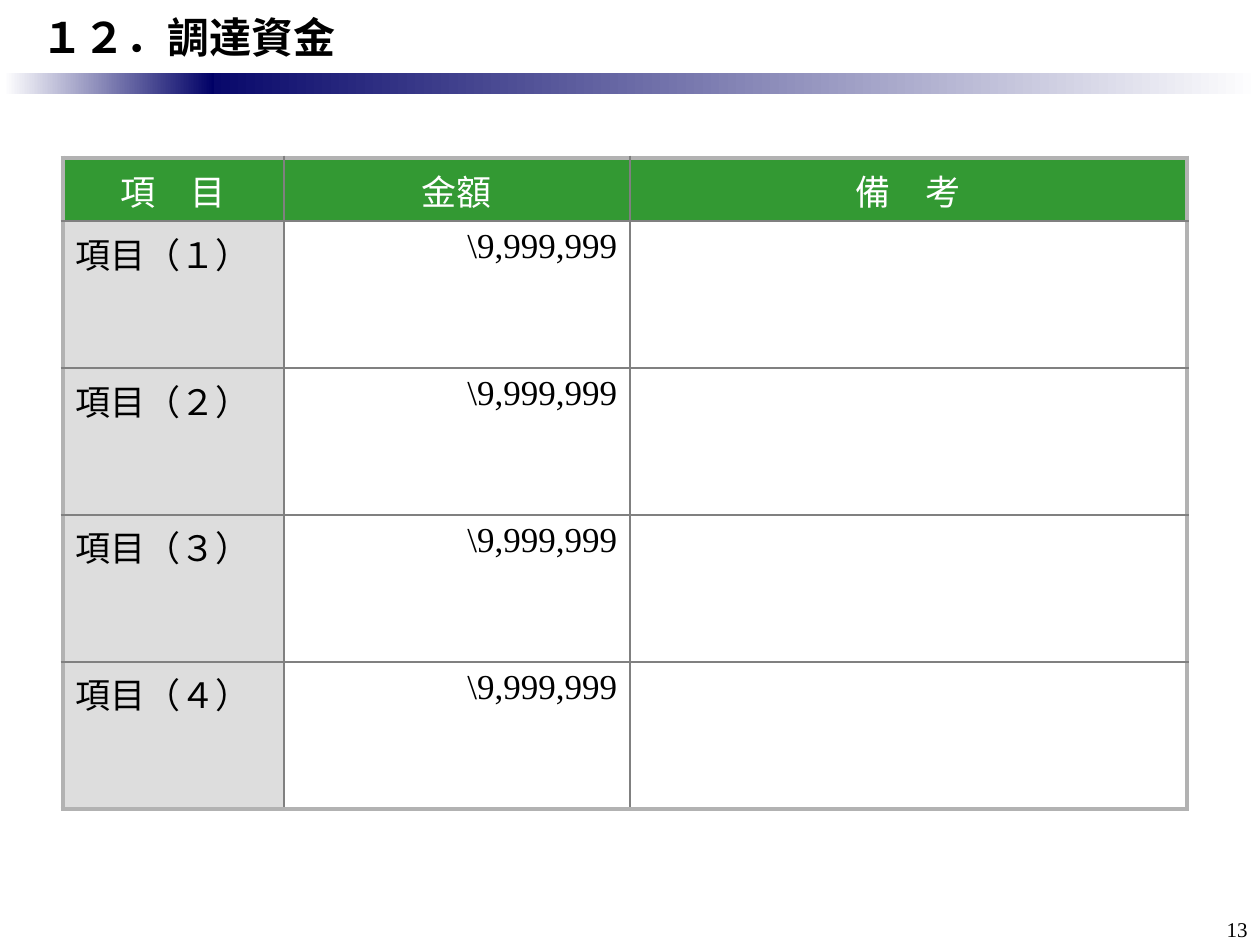
from lxml import etree
from pptx import Presentation
from pptx import util as u
from pptx.dml.color import RGBColor
from pptx.enum import shapes, text
from pptx.oxml.ns import qn

PX = u.Inches(1) / 126
BLACK = RGBColor(0x00, 0x00, 0x00)
WHITE = RGBColor(0xFF, 0xFF, 0xFF)
NAVY = RGBColor(0x00, 0x00, 0x66)
GREEN = RGBColor(0x33, 0x99, 0x33)
PALE = RGBColor(0xDD, 0xDD, 0xDD)
FRAME = RGBColor(0xB2, 0xB2, 0xB2)
GRID = RGBColor(0x80, 0x80, 0x80)
SERIF = "Times New Roman"
GOTHIC = "Noto Sans CJK JP"

HEADINGS = ["項　目", "金額", "備　考"]
ITEMS = [[f"項目（{digit}）", "\\9,999,999", ""] for digit in "１２３４"]
COLUMN_WIDTHS = [221, 346, 557]
HEADING_HEIGHT, ITEM_HEIGHT = 63, 147


def px(*lengths):
    return [u.Emu(round(length * PX)) for length in lengths]


def style(paragraph, size, color, latin=SERIF, bold=False, align=text.PP_ALIGN.LEFT):
    paragraph.alignment = align
    font = paragraph.font
    font.size, font.name, font.bold = u.Pt(size), latin, bold
    font.color.rgb = color
    east_asian = etree.SubElement(paragraph._p.pPr.find(qn("a:defRPr")), qn("a:ea"))
    east_asian.set("typeface", GOTHIC)


def add_label(slide, box, wording, left_inset=13, **look):
    frame = slide.shapes.add_textbox(*px(*box)).text_frame
    frame.word_wrap = True
    frame.vertical_anchor = text.MSO_ANCHOR.MIDDLE
    frame.margin_left = px(left_inset)[0]
    frame.text = wording
    style(frame.paragraphs[0], color=BLACK, **look)


def add_fade(slide, box, start, end):
    fade = slide.shapes.add_shape(shapes.MSO_SHAPE.RECTANGLE, *px(*box))
    fade.shadow.inherit = False
    fade.line.fill.background()
    fade.fill.gradient()
    fade.fill.gradient_angle = 0
    for stop, color in zip(fade.fill.gradient_stops, (start, end)):
        stop.color.rgb = color


def add_header(slide, left, top, width, height):
    """Title above a rule that fades out to both sides."""
    rule_top, rule_height = top + height, 21
    add_fade(slide, (left + 179, rule_top, width - 179, rule_height), NAVY, WHITE)
    add_fade(slide, (left + 4, rule_top, 210, rule_height), WHITE, NAVY)
    add_label(slide, (left, top, width, height), "１２．調達資金", left_inset=42,
              size=24, latin=GOTHIC, bold=True)


def set_borders(cell, outer_sides):
    """Thick frame on the outer sides, thin grid lines on the others."""
    properties = cell._tc.get_or_add_tcPr()
    for position, side in enumerate("LRTB"):
        color, points = (FRAME, 3) if side in outer_sides else (GRID, 1)
        line = etree.Element(qn(f"a:ln{side}"), w=str(u.Pt(points)))
        fill = etree.SubElement(line, qn("a:solidFill"))
        etree.SubElement(fill, qn("a:srgbClr"), val=str(color))
        properties.insert(position, line)


def add_funds_table(slide, left, top):
    rows = [HEADINGS] + ITEMS
    heights = [HEADING_HEIGHT] + [ITEM_HEIGHT] * len(ITEMS)
    box = px(left, top, sum(COLUMN_WIDTHS), sum(heights))
    table = slide.shapes.add_table(len(rows), len(HEADINGS), *box).table
    table.first_row = table.horz_banding = False
    for column, width in zip(table.columns, px(*COLUMN_WIDTHS)):
        column.width = width
    for row, height in zip(table.rows, px(*heights)):
        row.height = height

    aligns = [text.PP_ALIGN.LEFT, text.PP_ALIGN.RIGHT, text.PP_ALIGN.LEFT]
    last_row, last_column = len(rows) - 1, len(HEADINGS) - 1
    for r, wordings in enumerate(rows):
        for c, wording in enumerate(wordings):
            cell = table.cell(r, c)
            cell.text = wording
            cell.fill.solid()
            cell.fill.fore_color.rgb = GREEN if r == 0 else PALE if c == 0 else WHITE
            paragraph = cell.text_frame.paragraphs[0]
            paragraph.space_before = u.Pt(4)
            style(paragraph, 20, WHITE if r == 0 else BLACK,
                  align=text.PP_ALIGN.CENTER if r == 0 else aligns[c])
            edges = {"L": c == 0, "R": c == last_column, "T": r == 0, "B": r == last_row}
            set_borders(cell, [side for side, outer in edges.items() if outer])


def main():
    deck = Presentation()
    deck.slide_width, deck.slide_height = px(1260, 945)
    slide = deck.slides.add_slide(deck.slide_layouts[6])
    add_header(slide, 0, 0, 1260, 73)
    add_funds_table(slide, 63, 158)
    add_label(slide, (1187, 914, 73, 31), "13", size=12, align=text.PP_ALIGN.RIGHT)
    deck.save("out.pptx")


if __name__ == "__main__":
    main()
